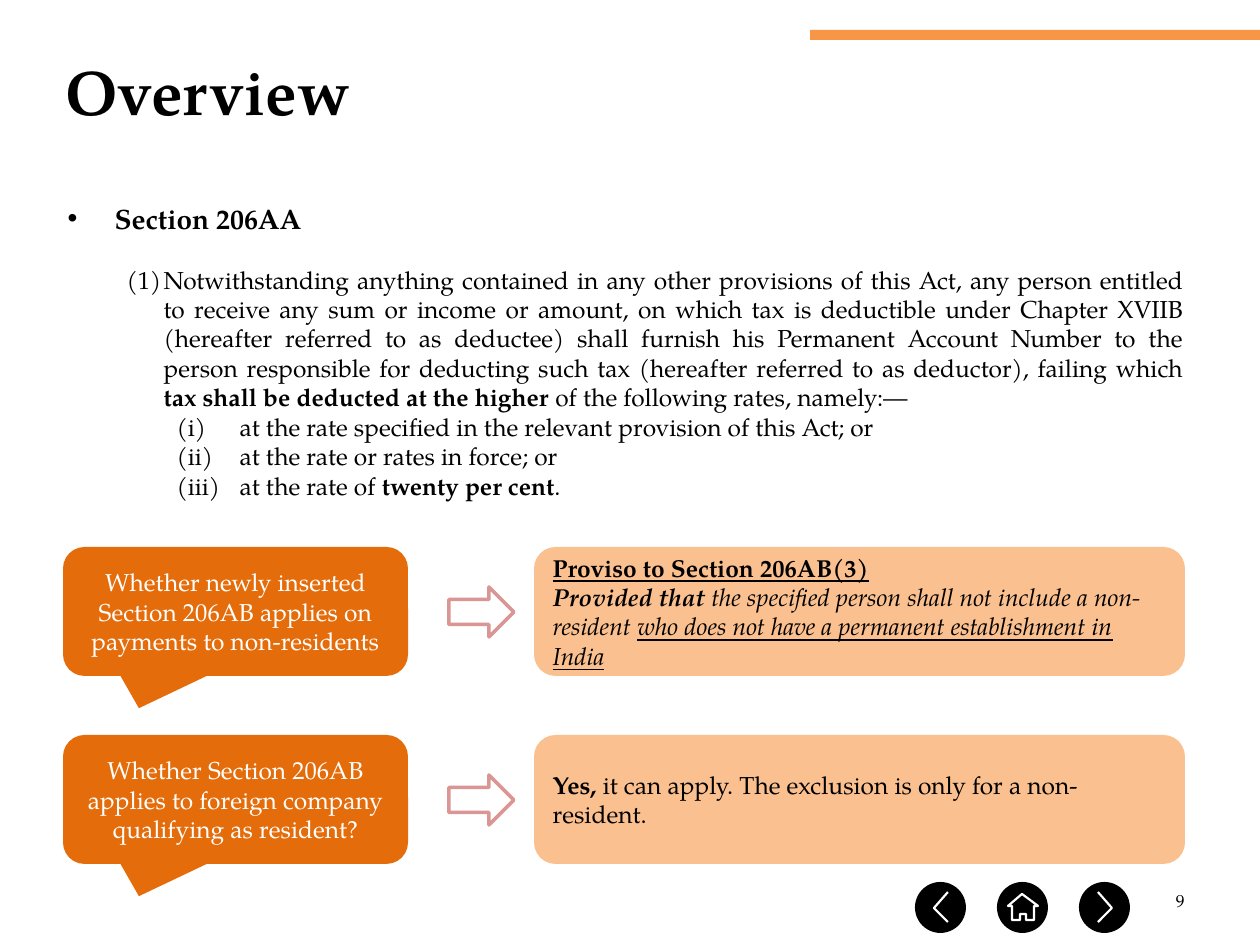
from lxml import etree
from pptx import Presentation
from pptx import util as u
from pptx.dml.color import RGBColor
from pptx.enum import shapes, text
from pptx.oxml import ns

FONT = "TeX Gyre Pagella"
COLORS = {"black": "000000", "white": "FFFFFF", "bar": "F79646",
          "question": "E46C0A", "answer": "FAC090", "arrow": "D99694"}
SCALE = 914400 / 126  # EMU per px

# Content: a paragraph is a list of (words, style); b bold, i italic, u underline
TITLE = "Overview"
NUMBER = "9"
ROMAN = ("buAutoNum", {"type": "romanLcParenBoth"})
# spans, size, space before (pt), left and hanging indent (px), level, bullet
SECTION = [
    ([("Section 206AA", "b")], 16, 1, 49, 47, 0, ("buChar", {"char": "•"})),
    ([("Notwithstanding anything contained in any other provisions of this Act, any person "
       "entitled to receive any sum or income or amount, on which tax is deductible under "
       "Chapter XVIIB (hereafter referred to as deductee) shall furnish his Permanent Account "
       "Number to the person responsible for deducting such tax (hereafter referred to as "
       "deductor), failing which ", ""),
      ("tax shall be deducted at the higher ", "b"),
      ("of the following rates, namely:—", "")],
     14, 17, 98, 37, 1, ("buAutoNum", {"type": "arabicParenBoth"})),
    ([("at the rate specified in the relevant provision of this Act; or", "")],
     14, 0, 174, 63, 2, ROMAN),
    ([("at the rate or rates in force; or", "")], 14, 0, 174, 63, 2, ROMAN),
    ([("at the rate of ", ""), ("twenty per cent", "b"), (".", "")], 14, 0, 174, 63, 2, ROMAN),
]
QUESTIONS = [
    ("Whether newly inserted Section 206AB applies on payments to non-residents",
     [[("Proviso to Section 206AB(3)", "bu")],
      [("Provided that ", "bi"),
       ("the specified person shall not include a non-resident ", "i"),
       ("who does not have a permanent establishment in India", "iu")]]),
    ("Whether Section 206AB applies to foreign company qualifying as resident?",
     [[("Yes, ", "b"), ("it can apply. The exclusion is only for a non-resident.", "")]]),
]
# Button glyphs: points around the button centre, closed or not
BUTTONS = [
    ([(8, -15), (-7, 0), (8, 15)], False),
    ([(-15, -1), (0, -14), (15, -1), (11, -1), (11, 13), (3, 13), (3, 6),
      (-3, 6), (-3, 13), (-11, 13), (-11, -1)], True),
    ([(-7, -15), (8, 0), (-7, 15)], False),
]


def px(*lengths):
    return [u.Emu(round(length * SCALE)) for length in lengths]


def color(name):
    return RGBColor.from_string(COLORS[name])


def write(para, spans, size, ink="black", align=text.PP_ALIGN.LEFT):
    para.alignment = align
    para.font.name, para.font.size = FONT, u.Pt(size)
    para.font.color.rgb = color(ink)
    for words, style in spans:
        span = para.add_run()
        span.text = words
        span.font.bold = "b" in style
        span.font.italic = "i" in style
        span.font.underline = "u" in style


def paint(shape, fill=None, line=None, width=0):
    shape.shadow.inherit = False
    if fill:
        shape.fill.solid()
        shape.fill.fore_color.rgb = color(fill)
    else:
        shape.fill.background()
    if line:
        shape.line.color.rgb = color(line)
        shape.line.width = u.Pt(width)
    else:
        shape.line.fill.background()
    return shape


def add_box(kind, place, **look):
    return paint(page.shapes.add_shape(kind, *px(*place)), **look)


def place_frame(box, place, anchor):
    box.left, box.top, box.width, box.height = px(*place)
    frame = box.text_frame
    frame.word_wrap = True
    frame.auto_size = text.MSO_AUTO_SIZE.NONE
    frame.vertical_anchor = anchor
    return frame


def fill_frame(frame, paragraphs, **style):
    frame.word_wrap = True
    frame.vertical_anchor = text.MSO_ANCHOR.MIDDLE
    for index, spans in enumerate(paragraphs):
        para = frame.add_paragraph() if index else frame.paragraphs[0]
        write(para, spans, 14, **style)


def set_bullet(para, left, hanging, bullet):
    props = para._p.get_or_add_pPr()
    indent, hang = px(left, hanging)
    props.set("marL", str(indent))
    props.set("indent", str(-hang))
    tag, values = bullet
    mark = etree.Element(ns.qn("a:" + tag), values)
    props.find(ns.qn("a:defRPr")).addprevious(mark)


deck = Presentation()
deck.slide_width, deck.slide_height = px(1260, 945)
page = deck.slides.add_slide(deck.slide_layouts[1])

# Title and accent bar
frame = place_frame(page.shapes.title, (53, 42, 1121, 96), text.MSO_ANCHOR.MIDDLE)
write(frame.paragraphs[0], [(TITLE, "b")], 36)
add_box(shapes.MSO_SHAPE.RECTANGLE, (810, 30, 450, 10), fill="bar")

# Section text
frame = place_frame(page.placeholders[1], (53, 195, 1144, 314), text.MSO_ANCHOR.TOP)
for index, (spans, size, before, left, hanging, level, bullet) in enumerate(SECTION):
    para = frame.add_paragraph() if index else frame.paragraphs[0]
    para.level = level
    para.space_before = u.Pt(before)
    write(para, spans, size, align=text.PP_ALIGN.JUSTIFY if level else text.PP_ALIGN.LEFT)
    set_bullet(para, left, hanging, bullet)

# Question, arrow and answer rows
for row, (question, answer) in enumerate(QUESTIONS):
    top = 547 + row * 188
    callout = add_box(shapes.MSO_SHAPE.ROUNDED_RECTANGULAR_CALLOUT,
                      (63, top, 345, 129), fill="question")
    callout.adjustments[0], callout.adjustments[1] = -0.28, 0.75
    fill_frame(callout.text_frame, [[(question, "")]], ink="white",
               align=text.PP_ALIGN.CENTER)
    reply = add_box(shapes.MSO_SHAPE.ROUNDED_RECTANGLE, (534, top, 651, 129), fill="answer")
    fill_frame(reply.text_frame, answer)
    add_box(shapes.MSO_SHAPE.RIGHT_ARROW, (449, top + 40, 65, 50), line="arrow", width=2)

# Navigation buttons
for index, (points, closed) in enumerate(BUTTONS):
    left, top, size = 915 + index * 82, 882, 51
    add_box(shapes.MSO_SHAPE.OVAL, (left, top, size, size), fill="black")
    corners = [(left + size / 2 + x, top + size / 2 + y) for x, y in points]
    outline = page.shapes.build_freeform(*corners[0], scale=SCALE)
    outline.add_line_segments(corners[1:], close=closed)
    paint(outline.convert_to_shape(), line="white", width=1.25)

# Page number
number = page.shapes.add_textbox(*px(903, 876, 294, 50))
frame = place_frame(number, (903, 876, 294, 50), text.MSO_ANCHOR.MIDDLE)
write(frame.paragraphs[0], [(NUMBER, "")], 10, align=text.PP_ALIGN.RIGHT)

deck.save("out.pptx")
